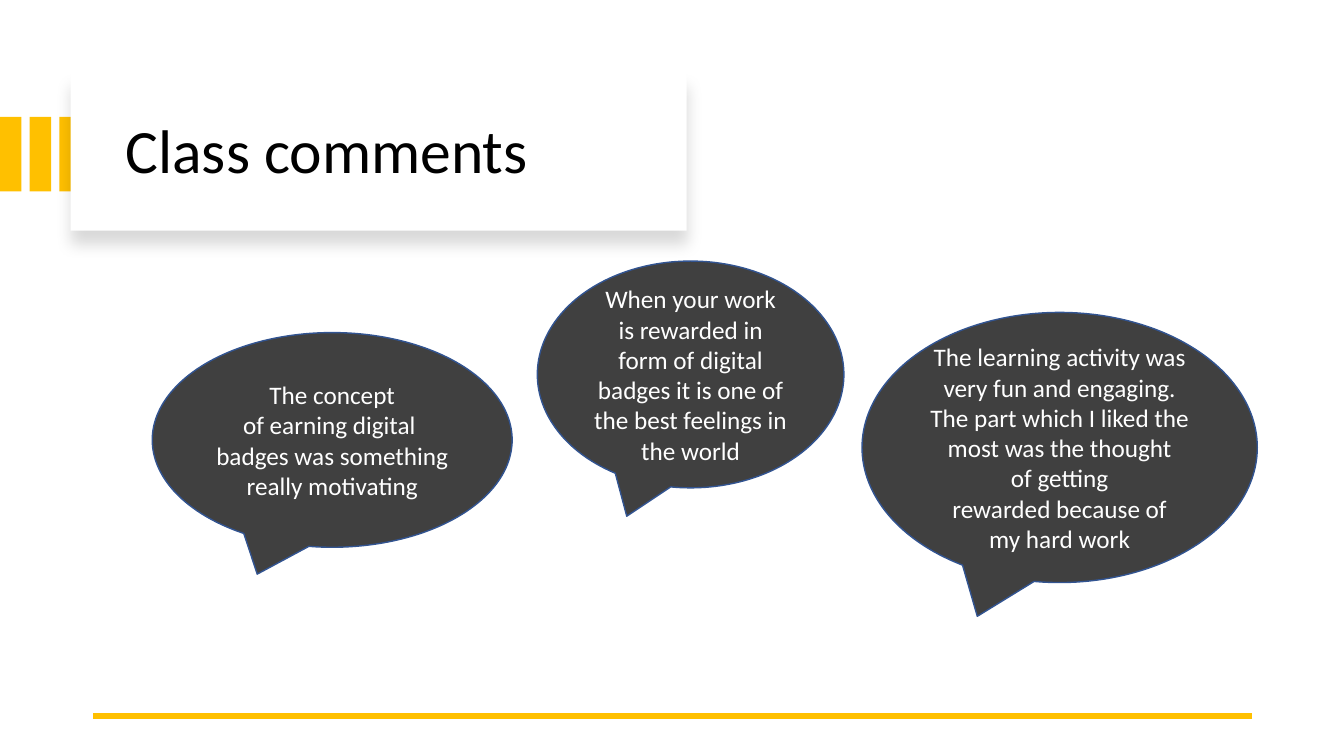
from lxml.etree import SubElement
from pptx import Presentation
from pptx.dml.color import RGBColor
from pptx.enum.shapes import MSO_CONNECTOR, MSO_SHAPE
from pptx.enum.text import MSO_ANCHOR, PP_ALIGN
from pptx.oxml.ns import qn
from pptx.util import Inches, Pt

GOLD = RGBColor(0xFF, 0xC0, 0x00)
CHARCOAL = RGBColor(0x40, 0x40, 0x40)
NAVY = RGBColor(0x32, 0x54, 0x91)
WHITE = RGBColor(0xFF, 0xFF, 0xFF)
BLACK = RGBColor(0x00, 0x00, 0x00)

deck = Presentation()
deck.slide_width, deck.slide_height = Inches(13.33), Inches(7.5)
COLUMN, ROW = deck.slide_width / 100, deck.slide_height / 100
slide = deck.slides.add_slide(deck.slide_layouts[6])


def grid(left, top, width, height):
    return [int(n * unit) for n, unit in zip((left, top, width, height), (COLUMN, ROW) * 2)]


def add_filled(shapes, preset, box, fill, outline=None):
    shape = shapes.add_shape(preset, *grid(*box))
    shape.fill.solid()
    shape.fill.fore_color.rgb = fill
    if outline:
        shape.line.color.rgb = outline
        shape.line.width = Pt(1)
    else:
        shape.line.fill.background()
    shape.shadow.inherit = False
    return shape


stripes = slide.shapes.add_group_shape()
for position in range(3):
    add_filled(stripes.shapes, MSO_SHAPE.RECTANGLE, (position * 2.21, 15.47, 1.6, 9.87), GOLD)

panel = add_filled(slide.shapes, MSO_SHAPE.RECTANGLE, (5.25, 9.6, 45.84, 20.9), WHITE)
effects = panel._element.spPr.find(qn("a:effectLst"))
shadow = SubElement(effects, qn("a:outerShdw"), blurRad=str(Pt(11)), dist=str(Pt(10)),
                    dir="5400000", algn="t", rotWithShape="0")
shade = SubElement(shadow, qn("a:srgbClr"), val=str(BLACK))
SubElement(shade, qn("a:alpha"), val="15000")

heading = slide.shapes.add_textbox(*grid(8.6, 12.8, 40.43, 15.07)).text_frame
heading.word_wrap = True
heading.vertical_anchor = MSO_ANCHOR.MIDDLE
heading.text = "Class comments"
heading.paragraphs[0].line_spacing = 0.9
for name, value in {"name": "Calibri", "size": Pt(44)}.items():
    setattr(heading.paragraphs[0].font, name, value)
heading.paragraphs[0].font.color.rgb = BLACK

start_x, base_y, end_x, _ = grid(93.17, 94.67, 6.9, 0)
baseline = slide.shapes.add_connector(MSO_CONNECTOR.STRAIGHT, start_x, base_y, end_x, base_y)
baseline.line.color.rgb = GOLD
baseline.line.width = Pt(4.5)
SubElement(baseline._element.spPr, qn("a:effectLst"))

comments = [
    ((11.33, 44, 26.78, 28.4),
     [["The concept", "of earning digital "],
      ["badges was something", "really motivating"]]),
    ((39.98, 34.53, 22.81, 30),
     [["When your work", "is rewarded in", "form of digital",
       "badges it is one of", "the best feelings in", "the world"]]),
    ((64.14, 41.33, 29.41, 35.73),
     [["The learning activity was", "very fun and engaging.",
       "The part which I liked the", "most was the thought", "of getting",
       "rewarded because of", "my hard work"]]),
]
for box, sentences in comments:
    bubble = add_filled(slide.shapes, MSO_SHAPE.OVAL_CALLOUT, box, CHARCOAL, NAVY)
    comment = bubble.text_frame
    comment.word_wrap = True
    comment.vertical_anchor = MSO_ANCHOR.MIDDLE
    for order, lines in enumerate(sentences):
        paragraph = comment.add_paragraph() if order else comment.paragraphs[0]
        for row, line in enumerate(lines):
            if row:
                paragraph.add_line_break()
            paragraph.add_run().text = line
        paragraph.alignment = PP_ALIGN.CENTER
        for name, value in {"name": "Calibri", "size": Pt(18)}.items():
            setattr(paragraph.font, name, value)
        paragraph.font.color.rgb = WHITE

deck.save("out.pptx")
